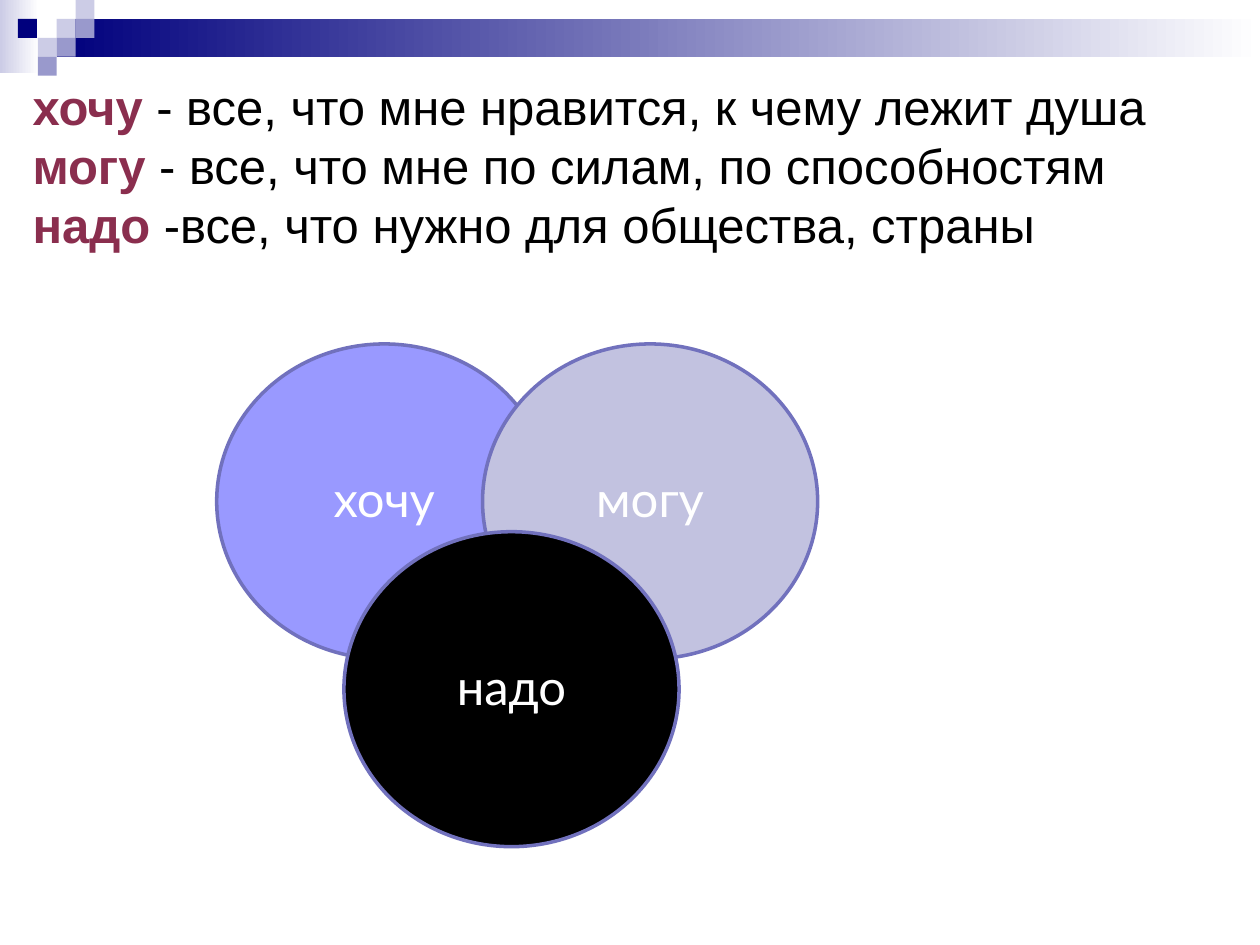
from pptx import Presentation
from pptx.dml.color import RGBColor
from pptx.enum import shapes, text
from pptx.util import Inches, Pt

COLORS = {
    "navy": "00007D", "pale": "CCCCE6", "mid": "9999CC", "white": "FFFFFF",
    "black": "000000", "term": "8A2E4E", "outline": "7171BD",
    "want": "9999FF", "can": "C2C2E0",
}

# Content
DEFINITIONS = [
    ("хочу", " - все, что мне нравится, к чему лежит душа"),
    ("могу", " - все, что мне по силам, по способностям"),
    ("надо", " -все, что нужно для общества, страны"),
]
CIRCLES = [  # label, left, top, fill
    ("хочу", 1.72, 2.73, "want"),
    ("могу", 3.83, 2.73, "can"),
    ("надо", 2.73, 4.22, "black"),
]
CIRCLE_SIZE = (2.66, 2.5)
GRADIENT_BARS = [  # left, top, width, height, start colour
    (0, 0, 0.31, 0.58, "pale"),
    (0.45, 0.15, 9.55, 0.3, "navy"),
]
TILE = 0.15
TILES = [  # column, row, fill
    (3, 1, "pale"), (4, 0, "pale"), (4, 1, "mid"), (2, 2, "pale"),
    (0.95, 1, "navy"), (3, 2, "mid"), (2, 3, "mid"),
]


def color(name):
    return RGBColor.from_string(COLORS[name])


def add_shape(slide, kind, left, top, width, height, fill=None):
    shape = slide.shapes.add_shape(
        kind, Inches(left), Inches(top), Inches(width), Inches(height))
    shape.shadow.inherit = False
    shape.line.fill.background()
    if fill:
        shape.fill.solid()
        shape.fill.fore_color.rgb = color(fill)
    return shape


def format_run(run, font, fill, bold=False):
    run.font.name = font
    run.font.size = Pt(28)
    run.font.bold = bold
    run.font.color.rgb = color(fill)


def add_header(slide):
    rectangle = shapes.MSO_SHAPE.RECTANGLE
    for *box, start in GRADIENT_BARS:
        bar = add_shape(slide, rectangle, *box)
        bar.fill.gradient()
        bar.fill.gradient_angle = 0
        for stop, name in zip(bar.fill.gradient_stops, (start, "white")):
            stop.color.rgb = color(name)
    for column, row, fill in TILES:
        add_shape(slide, rectangle, column * TILE, row * TILE, TILE, TILE, fill)


def add_circles(slide):
    for label, left, top, fill in CIRCLES:
        circle = add_shape(slide, shapes.MSO_SHAPE.OVAL, left, top, *CIRCLE_SIZE, fill)
        circle.line.color.rgb = color("outline")
        circle.line.width = Pt(2)
        frame = circle.text_frame
        frame.text = label
        frame.vertical_anchor = text.MSO_ANCHOR.MIDDLE
        paragraph = frame.paragraphs[0]
        paragraph.alignment = text.PP_ALIGN.CENTER
        paragraph.line_spacing = 0.93
        format_run(paragraph.runs[0], "Lato", "white")


def add_definitions(slide):
    box = slide.shapes.add_textbox(Inches(0.16), Inches(0.56), Inches(9.09), Inches(1.97))
    frame = box.text_frame
    frame.word_wrap = True
    frame.vertical_anchor = text.MSO_ANCHOR.TOP
    for index, (term, meaning) in enumerate(DEFINITIONS):
        paragraph = frame.add_paragraph() if index else frame.paragraphs[0]
        for words, fill, bold in ((term, "term", True), (meaning, "black", False)):
            run = paragraph.add_run()
            run.text = words
            format_run(run, "Arial", fill, bold)


def main():
    presentation = Presentation()
    presentation.slide_width = Inches(10)
    presentation.slide_height = Inches(7.5)
    slide = presentation.slides.add_slide(presentation.slide_layouts[6])
    add_header(slide)
    add_circles(slide)
    add_definitions(slide)
    presentation.save("out.pptx")


if __name__ == "__main__":
    main()
